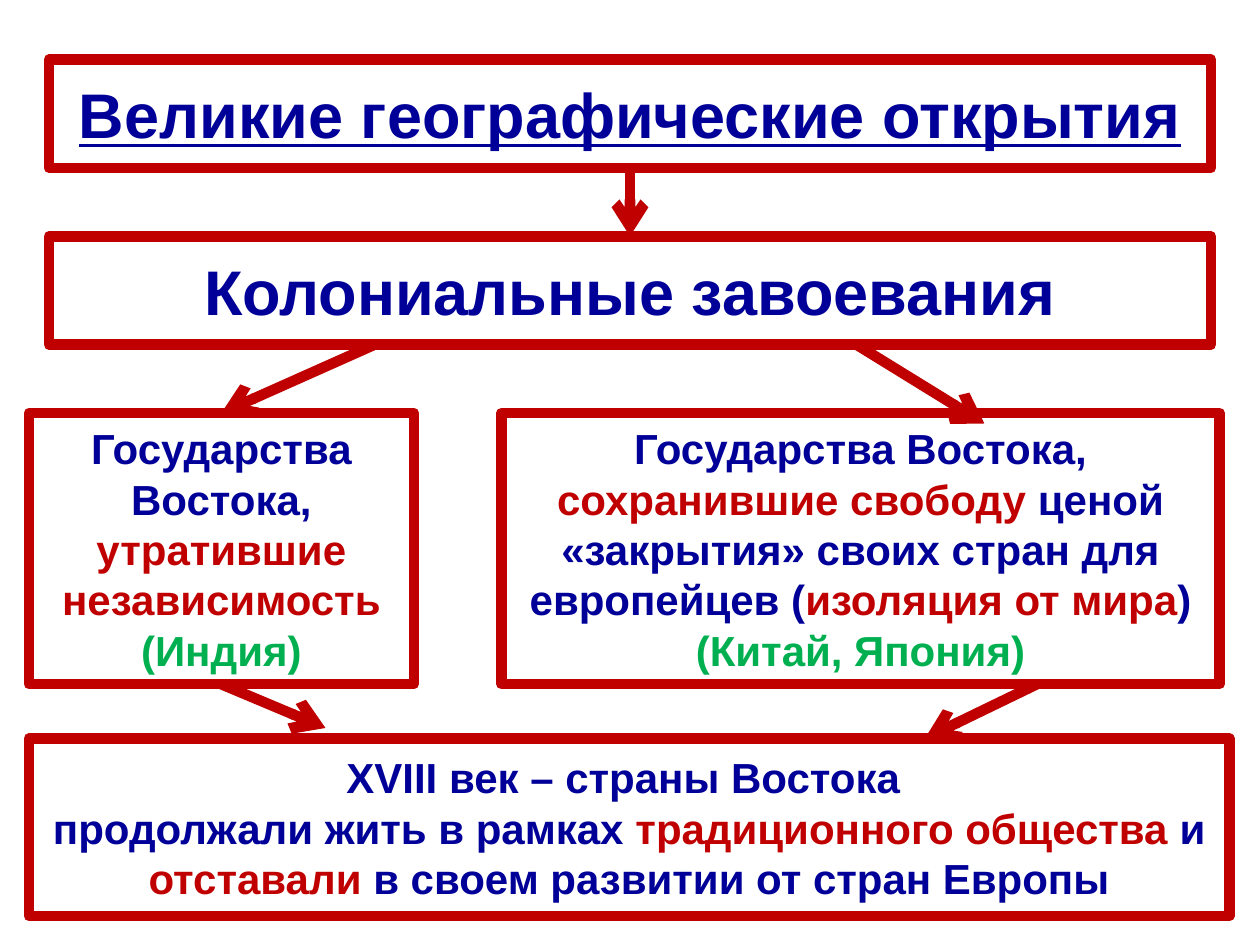
"""Build a slide on the Great Geographical Discoveries and the states of the East."""
import pptx
import pptx.dml.color
import pptx.enum.shapes
import pptx.enum.text
import pptx.oxml
import pptx.oxml.ns
import pptx.util

Pt = pptx.util.Pt
COLORS = {"navy": "000099", "red": "C00000", "green": "00B050", "white": "FFFFFF"}
TOP, BOTTOM = 0, 2


def rgb(name):
    return pptx.dml.color.RGBColor.from_string(COLORS[name])


def set_text(sp, paragraphs, size=24, underline=None):
    tf = sp.text_frame
    tf.word_wrap = True
    tf.auto_size = pptx.enum.text.MSO_AUTO_SIZE.NONE
    tf.vertical_anchor = pptx.enum.text.MSO_ANCHOR.MIDDLE
    for i, runs in enumerate(paragraphs):
        p = tf.add_paragraph() if i else tf.paragraphs[0]
        p.alignment = pptx.enum.text.PP_ALIGN.CENTER
        for text, color in runs:
            r = p.add_run()
            r.text = text
            r.font.name = "Arial"
            r.font.size = Pt(size)
            r.font.bold = True
            r.font.underline = underline
            r.font.color.rgb = rgb(color)


def frame(sp):
    sp.fill.solid()
    sp.fill.fore_color.rgb = rgb("white")
    sp.line.color.rgb = rgb("red")
    sp.line.width = Pt(6)


def add_title(s, x, y, w, h, text):
    sp = s.shapes.title
    sp.left, sp.top, sp.width, sp.height = Pt(x), Pt(y), Pt(w), Pt(h)
    frame(sp)
    set_text(sp, [[(text, "navy")]], size=36, underline=True)
    return sp


def add_box(s, x, y, w, h, paragraphs, **fmt):
    sp = s.shapes.add_shape(pptx.enum.shapes.MSO_SHAPE.RECTANGLE, Pt(x), Pt(y), Pt(w), Pt(h))
    sp.shadow.inherit = False
    frame(sp)
    set_text(sp, paragraphs, **fmt)
    return sp


def add_arrow(s, x1, y1, x2, y2, begin=None, end=None):
    c = s.shapes.add_connector(
        pptx.enum.shapes.MSO_CONNECTOR.STRAIGHT, Pt(x1), Pt(y1), Pt(x2), Pt(y2))
    c.line.color.rgb = rgb("red")
    c.line.width = Pt(6)
    ns = pptx.oxml.ns.nsdecls("a")
    ln = c.line._get_or_add_ln()
    ln.append(pptx.oxml.parse_xml(f'<a:tailEnd {ns} type="arrow"/>'))
    ln.getparent().append(pptx.oxml.parse_xml(f"<a:effectLst {ns}/>"))
    if begin is not None:
        c.begin_connect(begin, BOTTOM)
    if end is not None:
        c.end_connect(end, TOP)


def main():
    prs = pptx.Presentation()
    prs.slide_width, prs.slide_height = Pt(720), Pt(540)
    s = prs.slides.add_slide(prs.slide_layouts[5])

    title = add_title(s, 28, 34, 664, 62, "Великие географические открытия")
    conquest = add_box(s, 28, 135, 664, 62, [[("Колониальные завоевания", "navy")]], size=36)
    lost = add_box(s, 16.5, 236, 220, 155, [
        [("Государства Востока, ", "navy"), ("утратившие независимость", "red")],
        [("(Индия)", "green")],
    ])
    add_box(s, 286.5, 236, 410.5, 155, [
        [("Государства Востока, ", "navy"), ("сохранившие свободу ", "red"),
         ("ценой «закрытия» своих стран для европейцев (", "navy"),
         ("изоляция от мира", "red"), (")", "navy")],
        [("(Китай, Япония)", "green")],
    ])
    add_box(s, 16.5, 422, 686, 101.5, [
        [("XVIII век – страны Востока ", "navy")],
        [("продолжали жить в рамках ", "navy"), ("традиционного общества ", "red"),
         ("и ", "navy"), ("отставали", "red"),
         (" в своем развитии от стран Европы", "navy")],
    ])

    add_arrow(s, 360, 96, 360, 135, begin=title, end=conquest)
    add_arrow(s, 489.5, 197, 562.5, 242)
    add_arrow(s, 214, 197, 126.5, 236, end=lost)
    add_arrow(s, 126.5, 391, 186, 416, begin=lost)
    add_arrow(s, 592.5, 391, 528.5, 422)
    prs.save("out.pptx")


if __name__ == "__main__":
    main()
